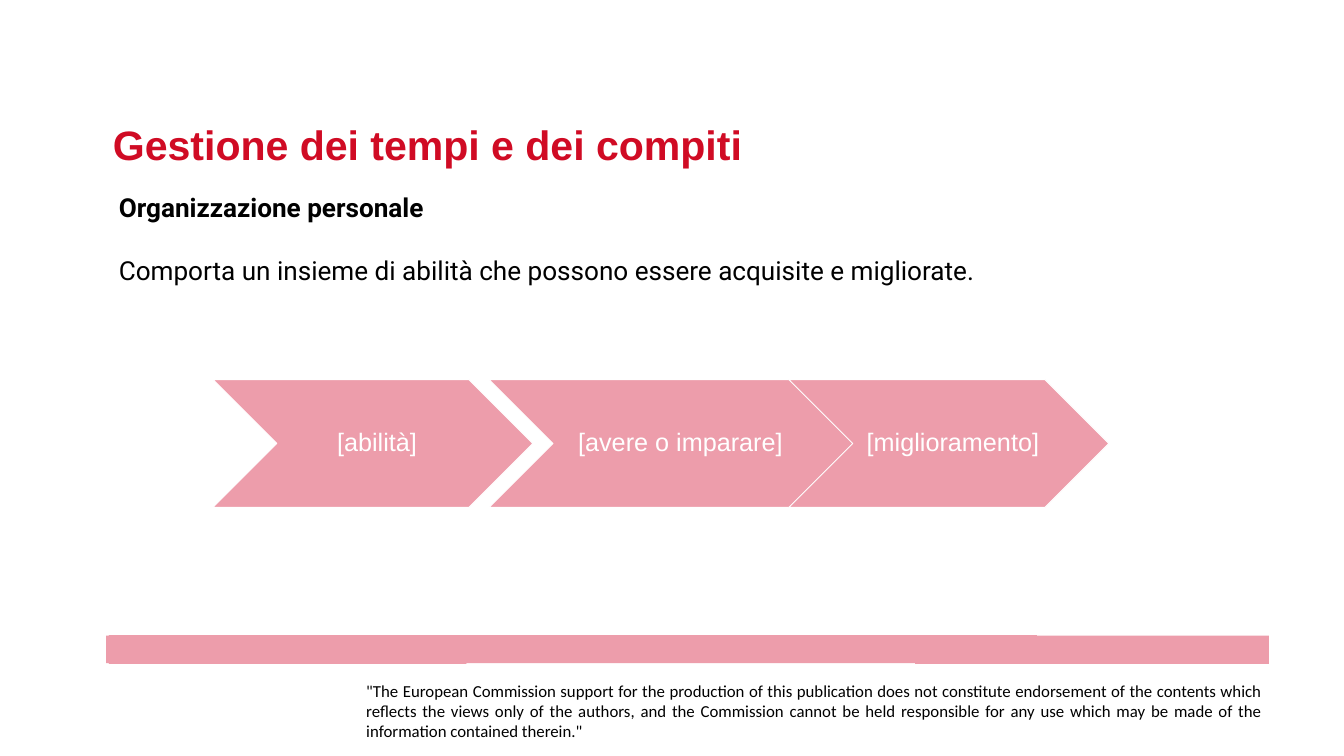
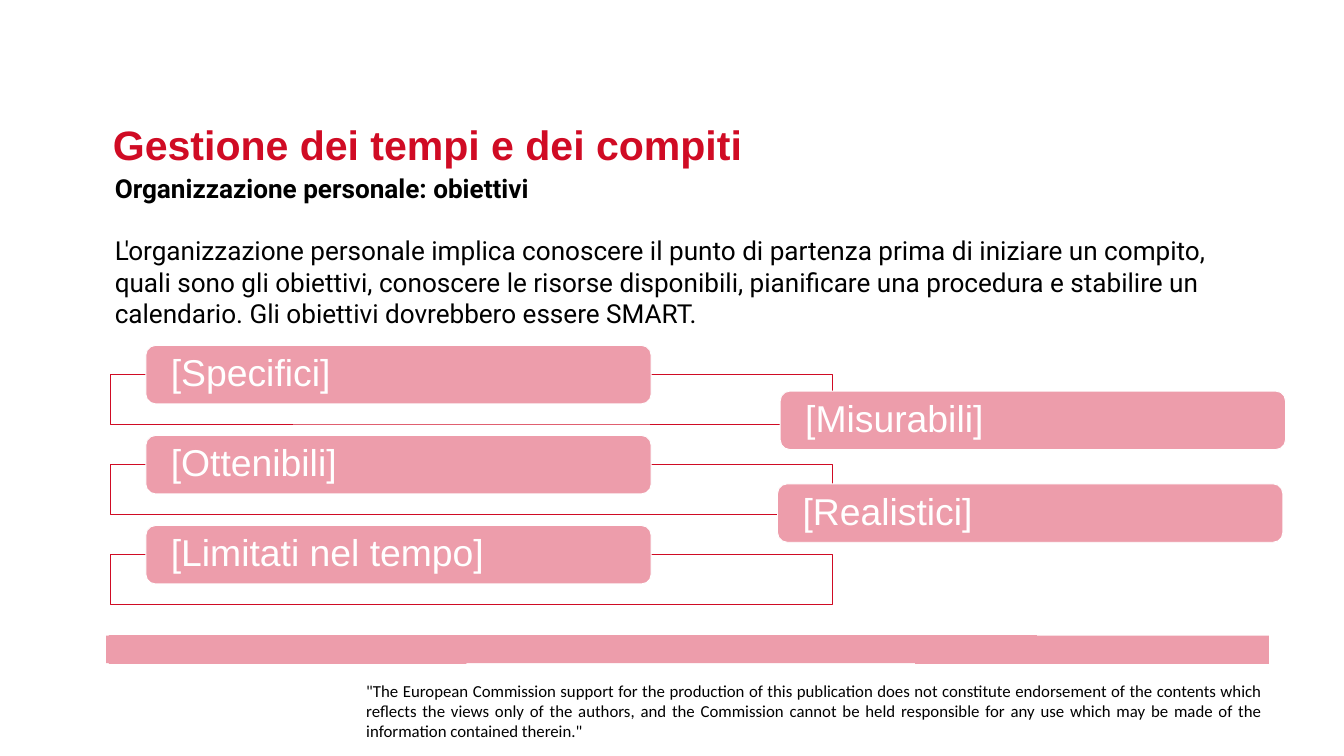
from pptx import Presentation
from pptx.dml.color import RGBColor
from pptx.enum.shapes import MSO_SHAPE
from pptx.enum.text import MSO_ANCHOR, MSO_AUTO_SIZE, PP_ALIGN
from pptx.oxml.ns import qn
from pptx.util import Pt
from lxml import etree

RED, PINK, WHITE, BLACK = "D00B24", "ED9DAB", "FFFFFF", "000000"
TITLE = "Gestione dei tempi e dei compiti"
DISCLAIMER = (
    '"The European Commission support for the production of this publication does not '
    "constitute endorsement of the contents which reflects the views only of the authors, "
    "and the Commission cannot be held responsible for any use which may be made of the "
    'information contained therein."'
)
BAND_OUTLINE = [
    (1359.4, 681.1), (1111, 681.1), (1111, 680.4), (116.6, 680.4), (116.6, 681.1),
    (113.8, 681.1), (113.8, 710.6), (116.6, 710.6), (116.6, 711.4), (499.7, 711.4),
    (499.7, 710.6), (980.6, 710.6), (980.6, 711.4), (1359.4, 711.4),
]


def color(hex_string):
    return RGBColor.from_string(hex_string)


class Deck:
    """Holds the shared style and the slide being filled."""

    def __init__(self):
        self.presentation = Presentation()
        self.presentation.slide_width = Pt(1440)
        self.presentation.slide_height = Pt(810)
        self.slide = None

    def start_slide(self, title):
        layout = self.presentation.slide_layouts.get_by_name("Title Only")
        self.slide = self.presentation.slides.add_slide(layout)
        self.place_title(title)
        self.draw_band()
        self.draw_disclaimer()

    def place_title(self, title):
        shape = self.slide.shapes.title
        shape.left, shape.top, shape.width, shape.height = Pt(113.76), Pt(123.84), Pt(694), Pt(59.76)
        shape.text_frame.text = title
        self.set_frame(shape, MSO_ANCHOR.TOP)
        self.style(shape.text_frame.paragraphs[0], "Arial", 44, RED, bold=True)

    def draw_band(self):
        points = [(Pt(x), Pt(y)) for x, y in BAND_OUTLINE]
        builder = self.slide.shapes.build_freeform(*points[0])
        builder.add_line_segments(points[1:], close=True)
        self.paint(builder.convert_to_shape(), PINK)

    def draw_disclaimer(self):
        frame = self.text_box(392.4, 730.8, 960, 54.72, [DISCLAIMER], insets=(0, 0, 0, 0))
        paragraph = frame.paragraphs[0]
        paragraph.line_spacing = 0.98
        self.style(paragraph, "Calibri", 18, BLACK, alignment=PP_ALIGN.JUSTIFY)

    def body(self, left, top, width, height, heading, text):
        frame = self.text_box(left, top, width, height, [heading, text])
        for paragraph, bold in zip(frame.paragraphs, (True, False)):
            self.style(paragraph, "Roboto", 28, BLACK, bold=bold)
        frame.paragraphs[1].space_before = Pt(33.7)

    def text_box(self, left, top, width, height, texts, insets=(7.2, 3.6, 7.2, 3.6)):
        shape = self.slide.shapes.add_textbox(Pt(left), Pt(top), Pt(width), Pt(height))
        self.set_frame(shape, MSO_ANCHOR.TOP, insets)
        shape.text_frame.text = "\n".join(texts)
        return shape.text_frame

    def label(self, preset, left, top, width, height, adjustment, text, size, insets,
              alignment=PP_ALIGN.LEFT):
        """Draw a pink shape with white text."""
        shape = self.shape(preset, left, top, width, height, PINK, WHITE)
        shape.adjustments[0] = adjustment
        shape.text_frame.text = text
        self.set_frame(shape, MSO_ANCHOR.MIDDLE, insets)
        paragraph = shape.text_frame.paragraphs[0]
        paragraph.line_spacing = 0.9
        self.style(paragraph, "Arial", size, WHITE, alignment=alignment)

    def chevron(self, left, width, text):
        self.label(MSO_SHAPE.CHEVRON, left, 406.8, width, 136.8, 0.5, text, 27,
                   (12.96, 4.32, 4.32, 4.32), PP_ALIGN.CENTER)

    def goal(self, left, top, text):
        self.label(MSO_SHAPE.ROUNDED_RECTANGLE, left, top, 541.44, 62.64, 0.167, text, 40,
                   (23.76, 2.88, 20.16, 2.88))

    def goal_frame(self, left, top):
        shape = self.shape(MSO_SHAPE.RECTANGLE, left, top, 774, 53.28, WHITE, RED)
        fill_color = shape.fill._xPr.find(qn("a:solidFill"))[0]
        etree.SubElement(fill_color, qn("a:alpha"), val="90000")

    def shape(self, preset, left, top, width, height, fill, line):
        shape = self.slide.shapes.add_shape(preset, Pt(left), Pt(top), Pt(width), Pt(height))
        self.paint(shape, fill, line)
        return shape

    @staticmethod
    def paint(shape, fill, line=None):
        shape.shadow.inherit = False
        shape.fill.solid()
        shape.fill.fore_color.rgb = color(fill)
        if line:
            shape.line.color.rgb = color(line)
            shape.line.width = Pt(1)
        else:
            shape.line.fill.background()

    @staticmethod
    def set_frame(shape, anchor, insets=(7.2, 3.6, 7.2, 3.6)):
        frame = shape.text_frame
        frame.word_wrap = True
        frame.auto_size = MSO_AUTO_SIZE.NONE
        frame.vertical_anchor = anchor
        frame.margin_left, frame.margin_top, frame.margin_right, frame.margin_bottom = map(Pt, insets)

    @staticmethod
    def style(paragraph, font_name, size, hex_string, bold=False, alignment=PP_ALIGN.LEFT):
        paragraph.alignment = alignment
        for run in paragraph.runs:
            run.font.name = font_name
            run.font.size = Pt(size)
            run.font.bold = bold
            run.font.color.rgb = color(hex_string)


def add_skills_slide(deck):
    deck.start_slide(TITLE)
    deck.body(120.24, 201.6, 1038, 108, "Organizzazione personale",
              "Comporta un insieme di abilità che possono essere acquisite e migliorate.")
    for left, width, text in [
        (228.24, 342.72, "[abilità]"),
        (524.16, 401.04, "[avere o imparare]"),
        (845.28, 342.72, "[miglioramento]"),
    ]:
        deck.chevron(left, width, text)


def add_goals_slide(deck):
    deck.start_slide(TITLE)
    deck.body(115.92, 180.72, 1212.48, 175, "Organizzazione personale: obiettivi",
              "L'organizzazione personale implica conoscere il punto di partenza prima di iniziare "
              "un compito, quali sono gli obiettivi, conoscere le risorse disponibili, pianificare "
              "una procedura e stabilire un calendario. Gli obiettivi dovrebbero essere SMART.")
    first_top, row_pitch = 370.08, 96.48
    for row, text in enumerate(["[Specifici]", "[Ottenibili]", "[Limitati nel tempo]"]):
        top = first_top + row * row_pitch
        deck.goal_frame(118.08, top + 30.96)
        deck.goal(156.24, top, text)
    deck.goal(835.92, 419.04, "[Misurabili]")
    deck.goal(833.04, 518.4, "[Realistici]")


def main():
    deck = Deck()
    add_skills_slide(deck)
    add_goals_slide(deck)
    deck.presentation.save("out.pptx")


if __name__ == "__main__":
    main()
